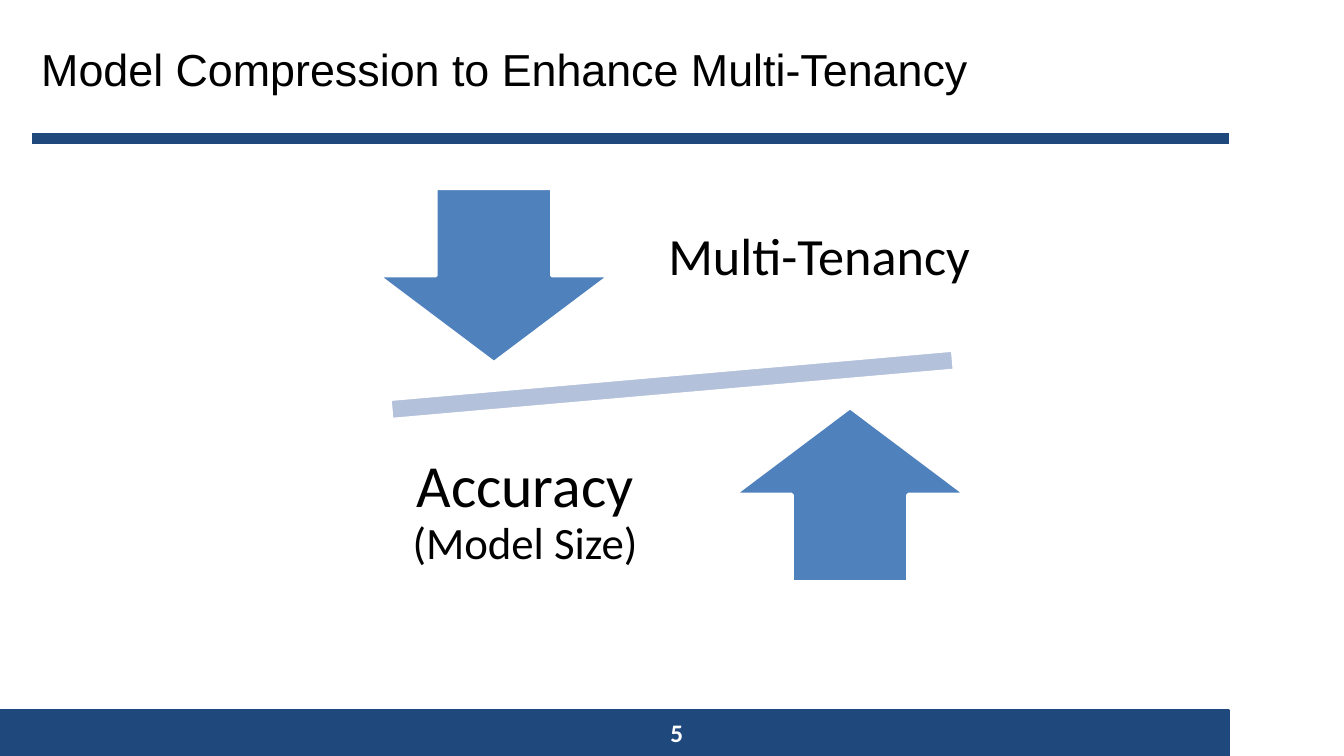
import pptx
import pptx.util
import pptx.dml.color
import pptx.enum.shapes
import pptx.enum.text
import lxml.etree
from pptx.oxml.ns import qn

Cm = pptx.util.Cm
Pt = pptx.util.Pt
Kind = pptx.enum.shapes.MSO_SHAPE
Align = pptx.enum.text.PP_ALIGN

COLORS = {
    "navy": "1F497D",
    "blue": "4F81BD",
    "pale": "B3C1DB",
    "white": "FFFFFF",
    "black": "000000",
}


def color(name):
    return pptx.dml.color.RGBColor.from_string(COLORS[name])


def add_shape(slide, kind, box, fill, edge, turn=0):
    shape = slide.shapes.add_shape(kind, *map(Cm, box))
    shape.shadow.inherit = False
    shape.fill.solid()
    shape.fill.fore_color.rgb = color(fill)
    shape.line.color.rgb = color(edge)
    shape.line.width = Pt(2)
    shape.rotation = turn
    return shape


def add_rule(slide, left, right, top):
    rule = slide.shapes.add_connector(
        pptx.enum.shapes.MSO_CONNECTOR.STRAIGHT, Cm(left), Cm(top), Cm(right), Cm(top))
    rule.line.color.rgb = color("navy")
    rule.line.width = Pt(6)
    lxml.etree.SubElement(rule._element.spPr, qn("a:effectLst"))


def add_text(slide, box, parts, font="Calibri", ink="black", bold=False,
             align=Align.CENTER, inset=None, space=None):
    frame = slide.shapes.add_textbox(*map(Cm, box)).text_frame
    frame.word_wrap = True
    frame.vertical_anchor = pptx.enum.text.MSO_ANCHOR.MIDDLE
    if inset is not None:
        frame.margin_left = frame.margin_right = Cm(inset)
        frame.margin_top = frame.margin_bottom = Cm(inset)
    para = frame.paragraphs[0]
    para.alignment = align
    para.line_spacing = space
    para.text = parts[0][0]
    for text, size in parts[1:]:
        para.add_run().text = text
    for run, (text, size) in zip(para.runs, parts):
        run.font.name = font
        run.font.size = Pt(size)
        run.font.bold = bold
        run.font.color.rgb = color(ink)


def add_scale(slide):
    add_shape(slide, Kind.MATH_MINUS, (5.44, 6.45, 14.53, 1.65), "pale", "white", 355)
    add_shape(slide, Kind.DOWN_ARROW, (7.14, 3.56, 4.39, 3.3), "blue", "white")
    add_text(slide, (11.25, 3.15, 8.46, 3.48), [("Multi-Tenancy", 28)],
             inset=0.56, space=0.9)
    add_shape(slide, Kind.UP_ARROW, (13.87, 7.7, 4.39, 3.3), "blue", "white")
    add_text(slide, (6.32, 7.95, 7.21, 3.48),
             [("Accuracy ", 32), ("(Model Size)", 24)], inset=0.64, space=0.9)


def main():
    deck = pptx.Presentation()
    deck.slide_width = Cm(25.4)
    deck.slide_height = Cm(14.29)
    slide = deck.slides.add_slide(deck.slide_layouts[6])
    add_shape(slide, Kind.RECTANGLE, (0, 13.44, 23.22, 0.85), "navy", "navy")
    add_rule(slide, 0.61, 23.22, 2.62)
    add_text(slide, (0.53, 0.25, 22.61, 2.11),
             [("Model Compression to Enhance Multi-Tenancy", 24)],
             font="Arial", align=Align.LEFT)
    add_text(slide, (9.83, 13.46, 5.92, 0.76), [("5", 13.5)], ink="white", bold=True)
    add_scale(slide)
    deck.save("out.pptx")


if __name__ == "__main__":
    main()
